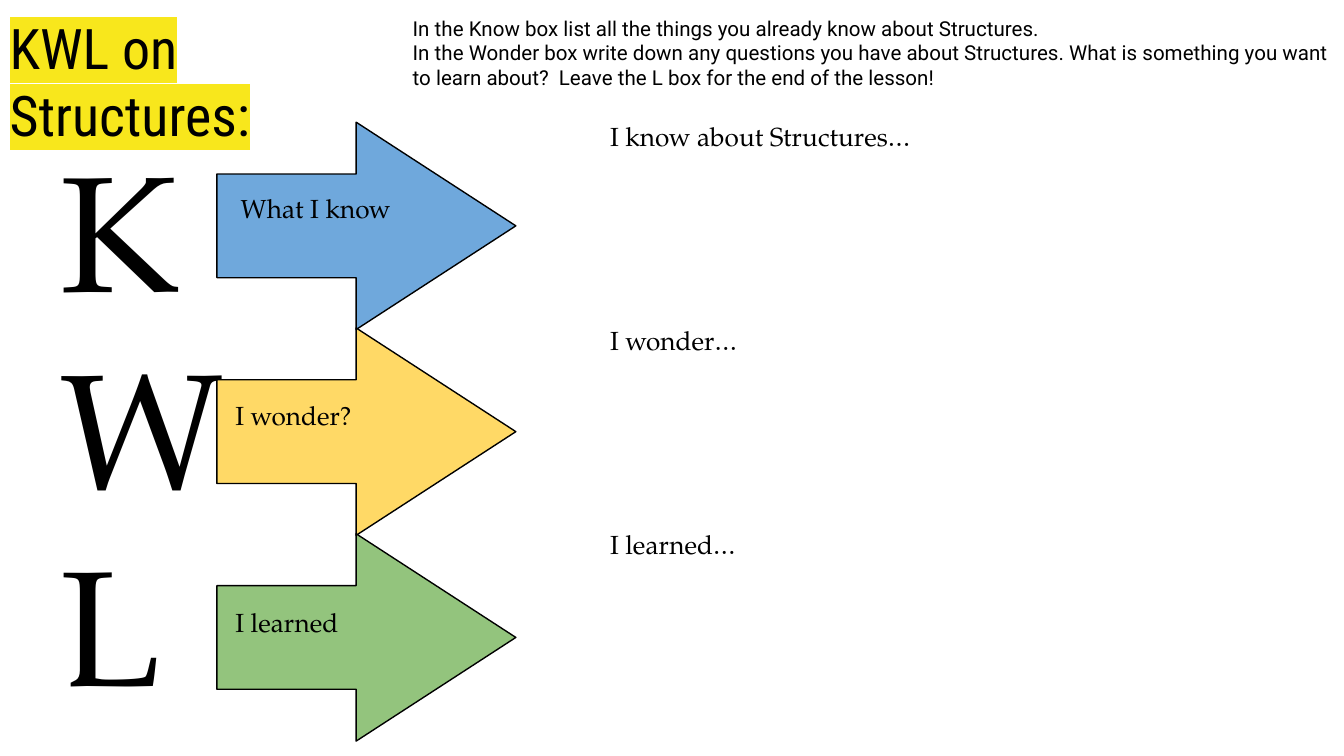
from dataclasses import dataclass

from lxml.etree import SubElement
from pptx import Presentation
from pptx.dml.color import RGBColor
from pptx.enum.shapes import MSO_SHAPE
from pptx.enum.text import MSO_ANCHOR, MSO_AUTO_SIZE, PP_ALIGN
from pptx.oxml.ns import qn
from pptx.util import Cm, Pt


@dataclass(frozen=True)
class Theme:
    ink: str = "000000"
    highlight: str = "F8E71C"
    know: str = "6FA8DC"
    wonder: str = "FFD966"
    learned: str = "93C47D"
    title_font: str = "Roboto Condensed"
    body_font: str = "Roboto"
    serif_font: str = "TeX Gyre Pagella"
    title_size: float = 30
    letter_size: float = 88
    label_size: float = 14
    instruction_size: float = 11
    outline: float = 0.75
    inset: float = 0.25


class ChartSlide:
    def __init__(self, slide, theme):
        self.slide = slide
        self.theme = theme

    def place(self, shape, box):
        shape.left, shape.top, shape.width, shape.height = map(Cm, box)

    def fill_text(self, shape, lines, font, size):
        frame = shape.text_frame
        frame.word_wrap = True
        frame.auto_size = MSO_AUTO_SIZE.NONE
        frame.vertical_anchor = MSO_ANCHOR.TOP
        frame.margin_left = frame.margin_right = Cm(self.theme.inset)
        frame.margin_top = frame.margin_bottom = Cm(self.theme.inset)
        for index, line in enumerate(lines):
            paragraph = frame.add_paragraph() if index else frame.paragraphs[0]
            paragraph.alignment = PP_ALIGN.LEFT
            run = paragraph.add_run()
            run.text = line
            run.font.size = Pt(size)
            run.font.color.rgb = RGBColor.from_string(self.theme.ink)
            run.font.name = font

    def title(self, text, box):
        shape = self.slide.shapes.title
        self.place(shape, box)
        self.fill_text(shape, [text], self.theme.title_font, self.theme.title_size)
        run = shape.text_frame.paragraphs[0].runs[0]
        properties = run._r.get_or_add_rPr()
        highlight = SubElement(properties, qn("a:highlight"))
        SubElement(highlight, qn("a:srgbClr"), val=self.theme.highlight)
        properties.find(qn("a:solidFill")).addnext(highlight)

    def text(self, lines, box, font, size):
        shape = self.slide.shapes.add_textbox(*map(Cm, box))
        self.fill_text(shape, lines, font, size)

    def arrow(self, box, color):
        shape = self.slide.shapes.add_shape(MSO_SHAPE.RIGHT_ARROW, *map(Cm, box))
        shape.adjustments[0] = 0.5
        shape.adjustments[1] = 0.77
        shape.shadow.inherit = False
        shape.fill.solid()
        shape.fill.fore_color.rgb = RGBColor.from_string(color)
        shape.line.color.rgb = RGBColor.from_string(self.theme.ink)
        shape.line.width = Pt(self.theme.outline)


def main():
    theme = Theme()
    presentation = Presentation()
    presentation.slide_width = Cm(25.4)
    presentation.slide_height = Cm(14.29)
    slide = presentation.slides.add_slide(presentation.slide_layouts[5])
    chart = ChartSlide(slide, theme)

    chart.title("KWL on Structures:", (-0.07, 0, 7.9, 2.13))
    chart.text(["K", "W", "L"], (0.9, 2.18, 6.02, 11.56), theme.serif_font, theme.letter_size)

    rows = [
        (theme.know, "What I know", 4.3, "I know about Structures…"),
        (theme.wonder, "I wonder?", 4.2, "I wonder…"),
        (theme.learned, "I learned", 4.2, "I learned…"),
    ]
    for index, (color, label, left, prompt) in enumerate(rows):
        chart.arrow((4.1, 2.31 + 3.89 * index, 5.65, 3.92), color)
    for index, (color, label, left, prompt) in enumerate(rows):
        chart.text([label], (left, 3.39 + 3.91 * index, 3.76, 1.68), theme.serif_font, theme.label_size)

    instructions = [
        "In the Know box list all the things you already know about Structures.",
        "In the Wonder box write down any questions you have about Structures. "
        "What is something you want to learn about?  Leave the L box for the end of the lesson!",
    ]
    chart.text(instructions, (7.55, 0.05, 17.85, 2.13), theme.body_font, theme.instruction_size)

    for index, (color, label, left, prompt) in enumerate(rows):
        chart.text([prompt], (11.28, 2.03 + 3.85 * index, 13.85, 4.18), theme.serif_font, theme.label_size)

    presentation.save("out.pptx")


if __name__ == "__main__":
    main()
